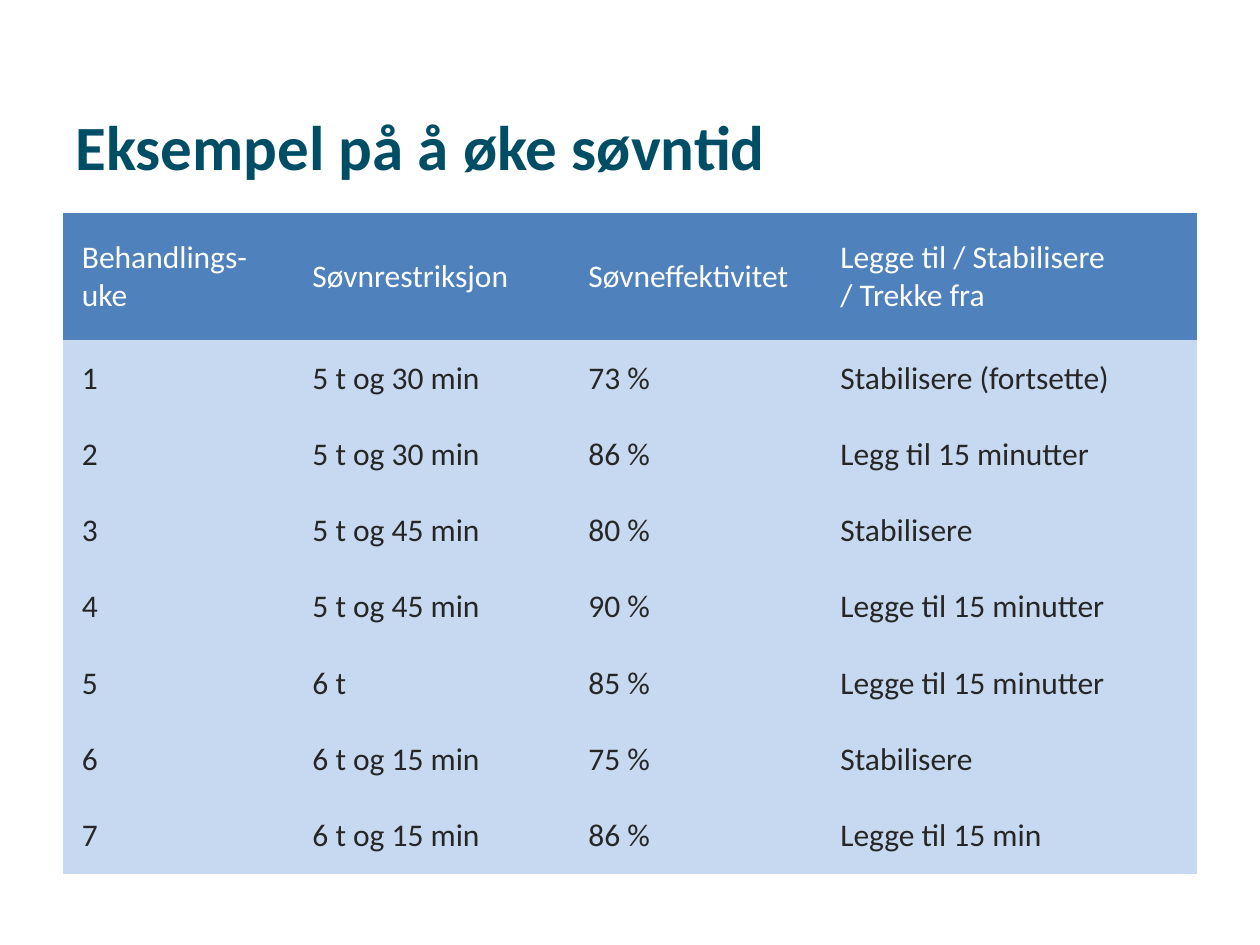
from dataclasses import dataclass

import pptx
import pptx.dml.color
import pptx.enum.text
import pptx.oxml.ns
import pptx.util
from pptx.util import Inches

RGB = pptx.dml.color.RGBColor.from_string
MIDDLE = pptx.enum.text.MSO_ANCHOR.MIDDLE
TOP = pptx.enum.text.MSO_ANCHOR.TOP
NO_STYLE_NO_GRID = "{2D5ABB26-0587-4C30-8999-92F81FD0307C}"


@dataclass(frozen=True)
class Theme:
    font: str = "Calibri"
    title_size: int = 36
    table_size: int = 18
    title: str = "004E66"
    header_fill: str = "4F81BD"
    header_text: str = "FFFFFF"
    body_fill: str = "C6D9F1"
    body_text: str = "262626"


THEME = Theme()

TITLE = "Eksempel på å øke søvntid"
HEADER = ("Behandlings-uke", "Søvnrestriksjon", "Søvneffektivitet",
          "Legge til / Stabilisere \v/ Trekke fra")
WEEKS = [
    ("5 t og 30 min", "73 %", "Stabilisere (fortsette)"),
    ("5 t og 30 min", "86 %", "Legg til 15 minutter"),
    ("5 t og 45 min", "80 %", "Stabilisere"),
    ("5 t og 45 min", "90 %", "Legge til 15 minutter"),
    ("6 t", "85 %", "Legge til 15 minutter"),
    ("6 t og 15 min", "75 %", "Stabilisere"),
    ("6 t og 15 min", "86 %", "Legge til 15 min"),
]
COLUMN_WIDTHS = (1.83, 2.19, 2, 2.98)
HEADER_HEIGHT, WEEK_HEIGHT = 1.01, 0.56
CELL_MARGIN = 0.15


def set_font(tf, size, color, bold=False):
    for p in tf.paragraphs:
        p.font.name = THEME.font
        p.font.size = pptx.util.Pt(size)
        p.font.bold = bold
        p.font.color.rgb = RGB(color)


def add_title(s, left, top, width, height):
    sp = s.shapes.add_textbox(Inches(left), Inches(top), Inches(width), Inches(height))
    tf = sp.text_frame
    tf.word_wrap = True
    tf.vertical_anchor = MIDDLE
    tf.text = TITLE
    set_font(tf, THEME.title_size, THEME.title, bold=True)


def fill_cell(cell, text, fill, color, anchor):
    cell.text = text
    cell.vertical_anchor = anchor
    cell.margin_left = cell.margin_right = Inches(CELL_MARGIN)
    cell.margin_top = cell.margin_bottom = Inches(CELL_MARGIN)
    cell.fill.solid()
    cell.fill.fore_color.rgb = RGB(fill)
    set_font(cell.text_frame, THEME.table_size, color)


def add_sleep_table(s, left, top, width, height):
    rows = [HEADER] + [(str(n), *week) for n, week in enumerate(WEEKS, 1)]
    table = s.shapes.add_table(len(rows), len(HEADER), Inches(left), Inches(top),
                               Inches(width), Inches(height)).table
    table.first_row = table.horz_banding = False
    style = table._tbl.tblPr.find(pptx.oxml.ns.qn("a:tableStyleId"))
    style.text = NO_STYLE_NO_GRID

    for column, share in zip(table.columns, COLUMN_WIDTHS):
        column.width = Inches(width * share / sum(COLUMN_WIDTHS))
    for i, row in enumerate(rows):
        if i == 0:
            row_height = HEADER_HEIGHT
            look = (THEME.header_fill, THEME.header_text, MIDDLE)
        else:
            row_height = WEEK_HEIGHT
            look = (THEME.body_fill, THEME.body_text, TOP)
        table.rows[i].height = Inches(row_height)
        for cell, text in zip(table.rows[i].cells, row):
            fill_cell(cell, text, *look)


def main():
    prs = pptx.Presentation()
    prs.slide_width, prs.slide_height = Inches(10), Inches(7.5)
    s = prs.slides.add_slide(prs.slide_layouts[6])
    add_sleep_table(s, 0.5, 1.69, 9, 5.21)
    add_title(s, 0.5, 0.53, 9, 1.25)
    prs.save("out.pptx")


if __name__ == "__main__":
    main()
